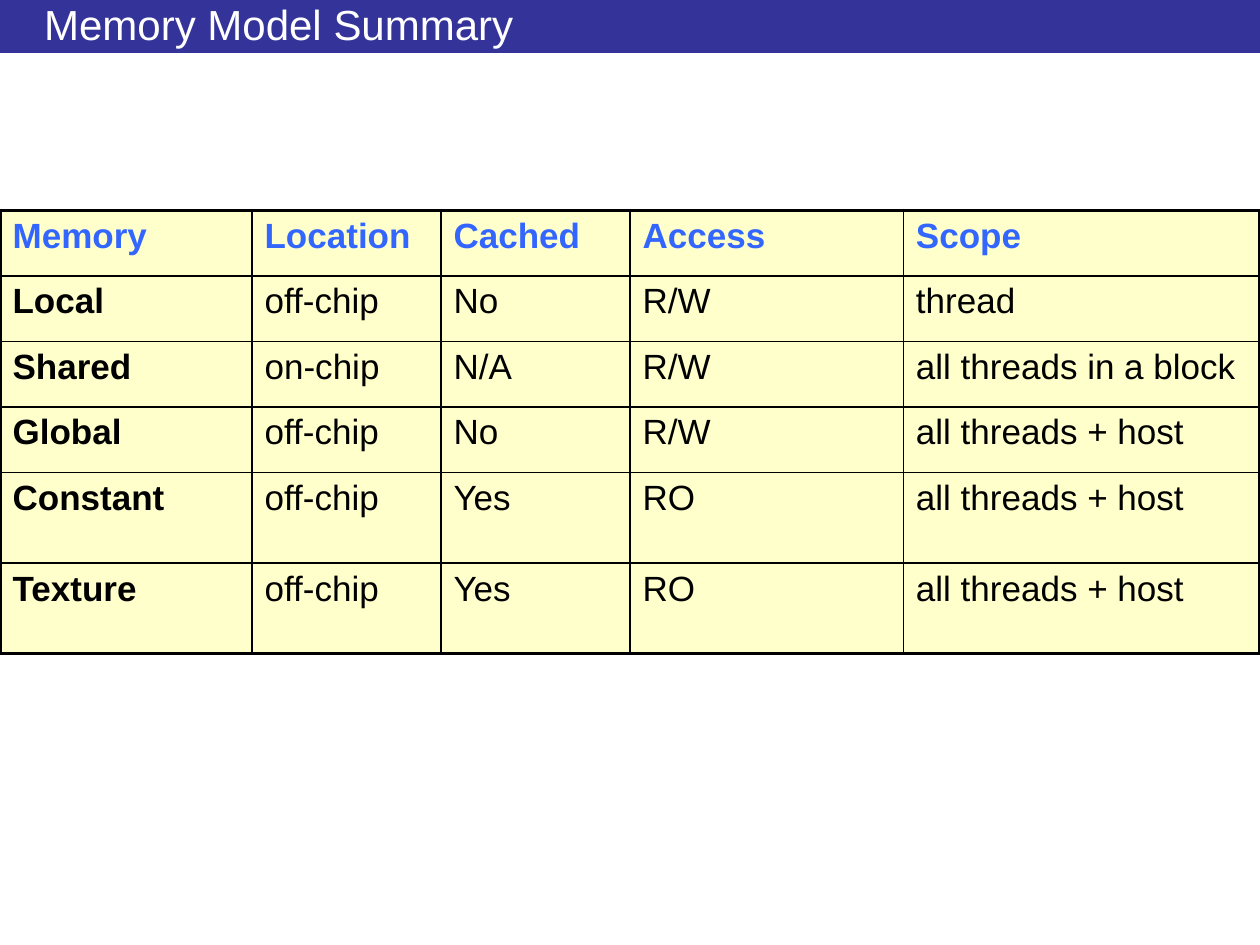
from dataclasses import dataclass

from lxml.etree import SubElement
from pptx import Presentation
from pptx.dml.color import RGBColor
from pptx.enum.shapes import MSO_SHAPE
from pptx.enum.text import MSO_ANCHOR, MSO_AUTO_SIZE, PP_ALIGN
from pptx.oxml.ns import qn
from pptx.util import Inches, Pt


@dataclass(frozen=True)
class Theme:
    font: str = "Arial"
    bar: str = "333399"
    title: str = "FFFFFF"
    heading: str = "3366FF"
    text: str = "000000"
    cell: str = "FFFFCC"
    border: str = "000000"
    title_size: float = 24
    cell_size: float = 20
    inner_line: float = 1
    outer_line: float = 2.25


THEME = Theme()
COLUMN_WIDTHS = [2, 1.5, 1.5, 2.17, 2.83]
ROW_HEIGHTS = [0.52] * 4 + [0.72] * 2
MEMORY_ROWS = [
    ["Memory", "Location", "Cached", "Access", "Scope"],
    ["Local", "off-chip", "No", "R/W", "thread"],
    ["Shared", "on-chip", "N/A", "R/W", "all threads in a block"],
    ["Global", "off-chip", "No", "R/W", "all threads + host"],
    ["Constant", "off-chip", "Yes", "RO", "all threads + host"],
    ["Texture", "off-chip", "Yes", "RO", "all threads + host"],
]


def set_font(paragraph, size, color, bold=False):
    font = paragraph.font
    font.name = THEME.font
    font.size = Pt(size)
    font.bold = bold
    font.color.rgb = RGBColor.from_string(color)


def add_title_bar(slide):
    """Draw the bar and send it behind the placeholders."""
    bar = slide.shapes.add_shape(MSO_SHAPE.RECTANGLE, 0, 0, Inches(10), Inches(0.42))
    bar.shadow.inherit = False
    bar.fill.solid()
    bar.fill.fore_color.rgb = RGBColor.from_string(THEME.bar)
    bar.line.fill.background()
    slide.shapes.title._element.addprevious(bar._element)


def fill_title(slide, text):
    title = slide.shapes.title
    title.left, title.top = Inches(0.25), Inches(0.05)
    title.width, title.height = Inches(9.25), Inches(0.28)
    frame = title.text_frame
    frame.text = text
    frame.auto_size = MSO_AUTO_SIZE.NONE
    frame.vertical_anchor = MSO_ANCHOR.MIDDLE
    frame.margin_top = frame.margin_bottom = 0
    paragraph = frame.paragraphs[0]
    paragraph.alignment = PP_ALIGN.LEFT
    set_font(paragraph, THEME.title_size, THEME.title)


def set_borders(cell, outer_sides):
    """Line all four sides, heavier on the outer ones; call before filling."""
    properties = cell._tc.get_or_add_tcPr()
    for side in "LRTB":
        width = THEME.outer_line if side in outer_sides else THEME.inner_line
        line = SubElement(properties, qn(f"a:ln{side}"), w=str(Pt(width)))
        fill = SubElement(line, qn("a:solidFill"))
        SubElement(fill, qn("a:srgbClr"), val=THEME.border)


def add_memory_table(slide):
    row_count, column_count = len(ROW_HEIGHTS), len(COLUMN_WIDTHS)
    table = slide.shapes.add_table(
        row_count, column_count, 0, Inches(1.67),
        Inches(sum(COLUMN_WIDTHS)), Inches(sum(ROW_HEIGHTS)),
    ).table
    for column, width in zip(table.columns, COLUMN_WIDTHS):
        column.width = Inches(width)
    for row, height in zip(table.rows, ROW_HEIGHTS):
        row.height = Inches(height)

    for i, texts in enumerate(MEMORY_ROWS):
        for j, text in enumerate(texts):
            cell = table.cell(i, j)
            edges = {"L": j == 0, "R": j == column_count - 1,
                     "T": i == 0, "B": i == row_count - 1}
            set_borders(cell, [side for side, outer in edges.items() if outer])
            cell.fill.solid()
            cell.fill.fore_color.rgb = RGBColor.from_string(THEME.cell)
            cell.text = text
            color = THEME.heading if i == 0 else THEME.text
            set_font(cell.text_frame.paragraphs[0], THEME.cell_size, color,
                     bold=i == 0 or j == 0)


def main():
    presentation = Presentation()
    presentation.slide_width, presentation.slide_height = Inches(10), Inches(7.5)
    title_only = presentation.slide_layouts[5]
    slide = presentation.slides.add_slide(title_only)
    add_title_bar(slide)
    fill_title(slide, "Memory Model Summary")
    add_memory_table(slide)
    presentation.save("out.pptx")


if __name__ == "__main__":
    main()
